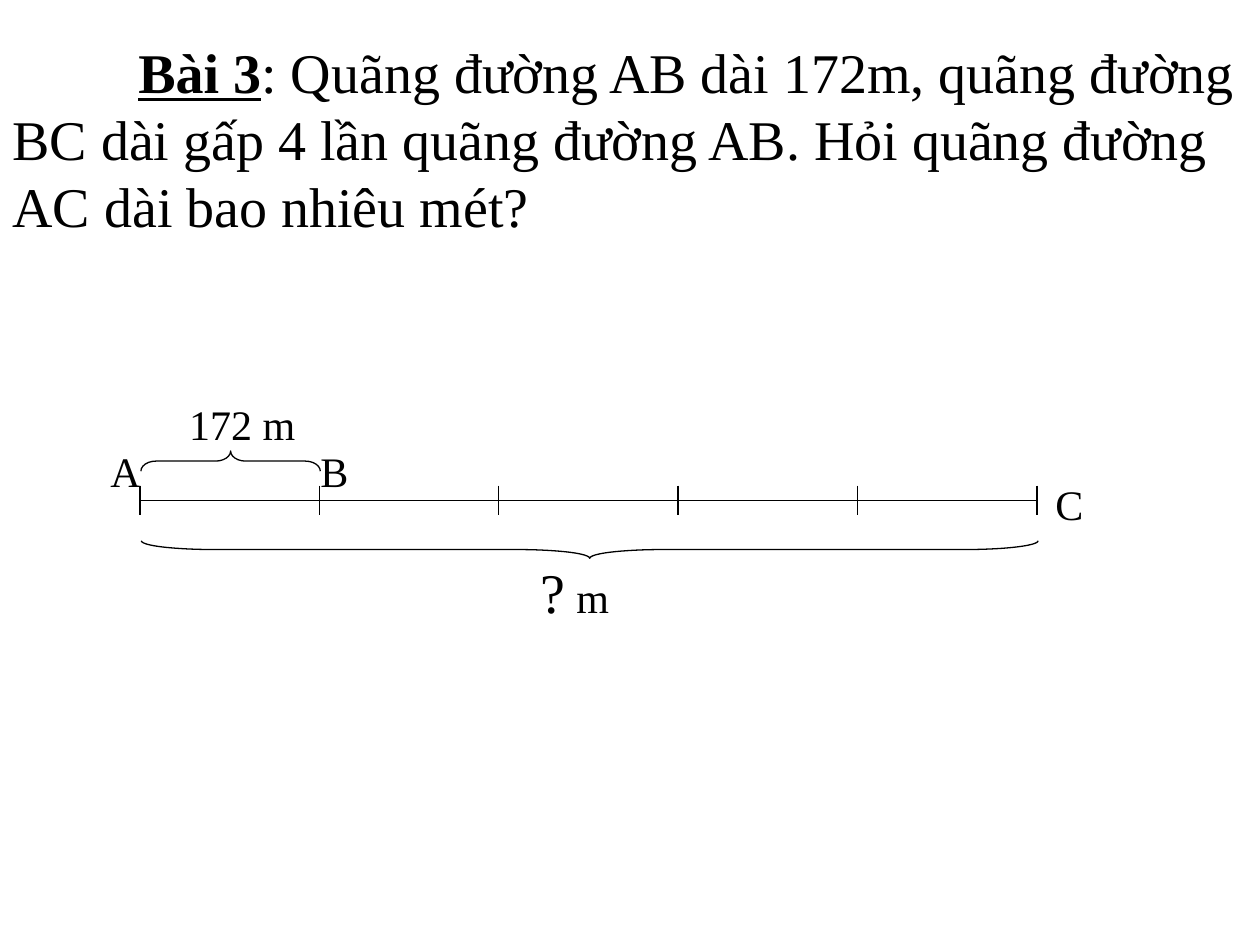
"""Build the word-problem slide with its segment diagram."""
import pptx
import pptx.dml.color
import pptx.enum.shapes
import pptx.enum.text
import pptx.util
from lxml import etree

Pt = pptx.util.Pt
THEME = {
    "font": "Times New Roman",
    "ink": pptx.dml.color.RGBColor(0, 0, 0),
    "line": 0.75,
    "large": 32,
    "label": 24,
}


class Sheet:
    """Hold the theme and the current slide, and draw elements in points."""

    def __init__(self, slide, theme):
        self.s = slide
        self.theme = theme

    def text(self, x, y, w, h, runs, anchor="TOP", indent=0):
        """Add a text box from (text, size name, extra format) runs."""
        sp = self.s.shapes.add_textbox(Pt(x), Pt(y), Pt(w), Pt(h))
        tf = sp.text_frame
        tf.word_wrap = True
        tf.vertical_anchor = pptx.enum.text.MSO_ANCHOR[anchor]
        p = tf.paragraphs[0]
        if indent:
            p._p.get_or_add_pPr().set("indent", str(Pt(indent)))
        for text, size, extra in runs:
            r = p.add_run()
            r.text = text
            fmt = {"name": self.theme["font"], "size": Pt(self.theme[size]), **extra}
            for key, value in fmt.items():
                setattr(r.font, key, value)
            r.font.color.rgb = self.theme["ink"]

    def stroke(self, sp):
        """Apply the theme line to a shape or connector."""
        sp.line.color.rgb = self.theme["ink"]
        sp.line.width = Pt(self.theme["line"])

    def line(self, x1, y1, x2, y2):
        """Add a straight line."""
        kind = pptx.enum.shapes.MSO_CONNECTOR.STRAIGHT
        sp = self.s.shapes.add_connector(kind, Pt(x1), Pt(y1), Pt(x2), Pt(y2))
        self.stroke(sp)
        etree.SubElement(sp._element.spPr, pptx.oxml.ns.qn("a:effectLst"))

    def brace(self, cx, cy, length, depth, curve, rotation):
        """Add a horizontal brace centred on a point."""
        sp = self.s.shapes.add_shape(
            pptx.enum.shapes.MSO_SHAPE.LEFT_BRACE,
            Pt(cx - depth / 2), Pt(cy - length / 2), Pt(depth), Pt(length))
        sp.rotation = rotation
        sp.adjustments[0] = curve
        sp.shadow.inherit = False
        sp.fill.background()
        self.stroke(sp)


def main():
    """Create the slide and save it."""
    prs = pptx.Presentation()
    prs.slide_width, prs.slide_height = Pt(720), Pt(540)
    sheet = Sheet(prs.slides.add_slide(prs.slide_layouts[6]), THEME)

    sheet.text(0, 34, 720, 90, [
        ("Bài 3", "large", {"bold": True, "underline": True}),
        (": Quãng đường AB dài 172m, quãng đường BC dài gấp 4 lần quãng đường AB. "
         "Hỏi quãng đường AC dài bao nhiêu mét?", "large", {}),
    ], anchor="MIDDLE", indent=72)

    left, step, parts, axis, tick = 80, 102.5, 5, 286, 8.5
    ticks = [left + i * step for i in range(parts + 1)]
    for x1, x2 in zip(ticks, ticks[1:]):
        sheet.line(x1, axis, x2, axis)
    for x in ticks:
        sheet.line(x, axis - tick, x, axis + tick)

    sheet.brace(131.75, 263.5, step, 11.5, 0.75, 90)
    sheet.brace(337, 314, parts * step, 10, 4.17, 270)

    labels = [
        ("172 m", 101, 224, 108),
        ("A", 56, 251, 45),
        ("B", 176, 251, 45),
        ("C", 596, 270, 45),
    ]
    for text, x, y, w in labels:
        sheet.text(x, y, w, 36, [(text, "label", {})])
    sheet.text(302, 315, 73, 45, [("?", "large", {}), (" m", "label", {})])

    prs.save("out.pptx")


if __name__ == "__main__":
    main()
